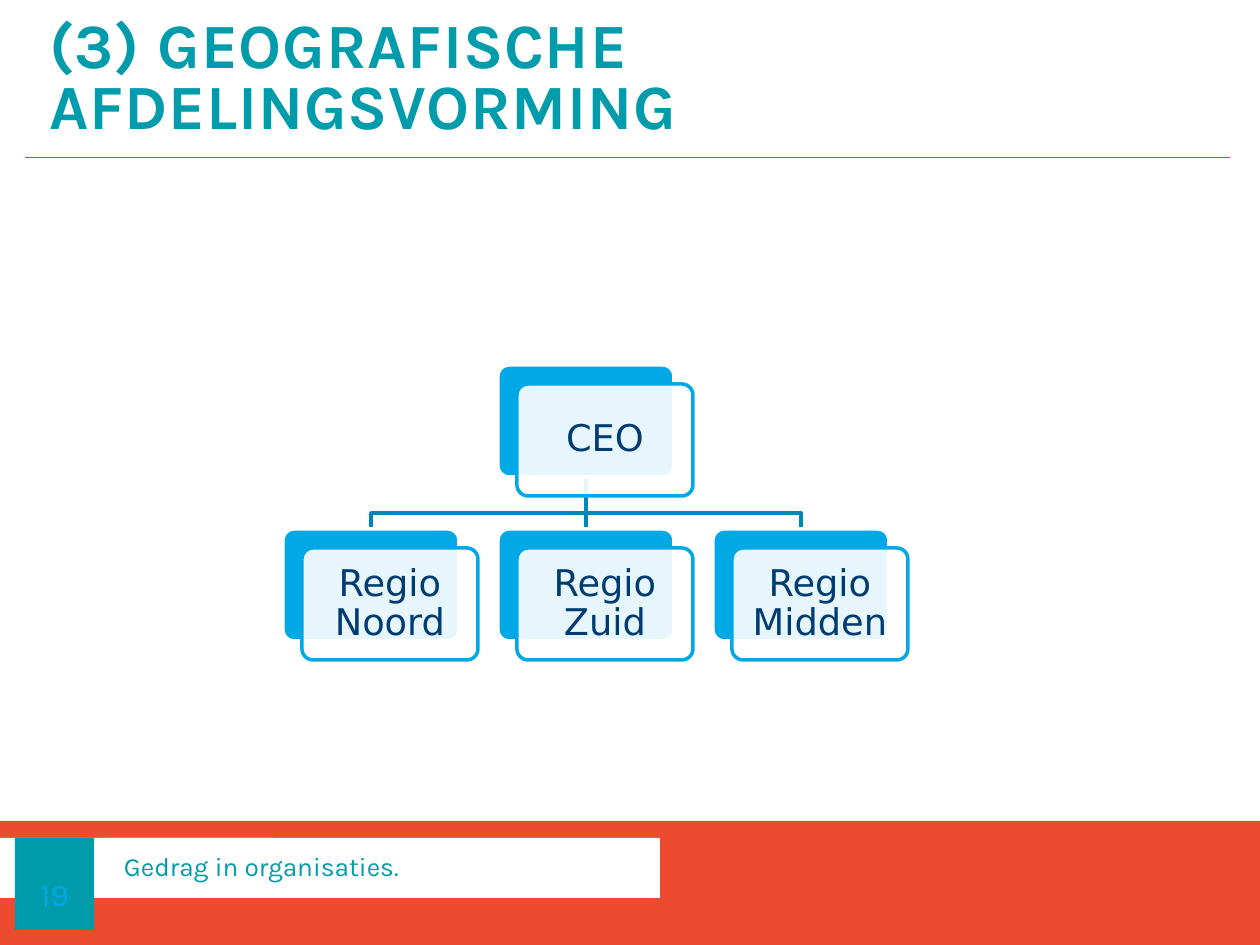
from pptx import Presentation
from pptx.dml.color import RGBColor as Rgb
from pptx.enum.shapes import MSO_CONNECTOR as Link, MSO_SHAPE as Kind
from pptx.enum.text import MSO_ANCHOR as Anchor, PP_ALIGN as Align
from pptx.oxml.ns import qn
from pptx.util import Pt
from lxml.etree import SubElement as Sub

TITLE = "(3) GEOGRAFISCHE AFDELINGSVORMING"
FOOTER = "Gedrag in organisaties."
NUMBER = "19"
HEAD = "CEO"
REGIONS = ["Regio Noord", "Regio Zuid", "Regio Midden"]

THEME = {
    "white": "FFFFFF", "red": "EC4B2F", "teal": "009CAB",
    "sky": "00A9E5", "link": "0087B7", "navy": "003C72",
    "title": {"name": "Karla", "size": Pt(36), "bold": True},
    "foot": {"name": "Karla", "size": Pt(15), "bold": False},
    "num": {"name": "Karla", "size": Pt(18), "bold": False},
    "node": {"name": "DejaVu Sans", "size": Pt(21), "bold": False},
}
SCALE = 914400 / 126
BOX_W, BOX_H, STEP, SHIFT = 176, 112, 215, 19
MID_X, HEAD_Y, REGION_Y, BEND_Y = 498, 365, 529, 513


def px(n):
    return round(n * SCALE)


def color(key):
    return Rgb.from_string(THEME[key])


def stroke(shape, key, width):
    shape.line.color.rgb = color(key)
    shape.line.width = Pt(width)


def flat(line):
    Sub(line._element.spPr, qn("a:effectLst"))


def block(slide, area, fill, line=None, kind=Kind.RECTANGLE):
    shape = slide.shapes.add_shape(kind, *map(px, area))
    shape.shadow.inherit = False
    shape.fill.solid()
    shape.fill.fore_color.rgb = color(fill)
    if line:
        stroke(shape, line, 2)
    else:
        shape.line.fill.background()
    if kind == Kind.ROUNDED_RECTANGLE:
        shape.adjustments[0] = 0.1
    return shape


def write(shape, text, style, ink, pad, anchor=Anchor.MIDDLE,
          align=Align.LEFT, space=0.9):
    frame = shape.text_frame
    sides = ("margin_left", "margin_top", "margin_right", "margin_bottom")
    look = dict(zip(sides, map(px, pad)), word_wrap=True, vertical_anchor=anchor)
    for key, value in look.items():
        setattr(frame, key, value)
    para = frame.paragraphs[0]
    para.alignment, para.line_spacing = align, space
    run = para.add_run()
    run.text = text
    for key, value in THEME[style].items():
        setattr(run.font, key, value)
    run.font.color.rgb = color(ink)
    return run


def node(slide, text, left, top):
    back = block(slide, (left, top, BOX_W, BOX_H), "sky", "white",
                 Kind.ROUNDED_RECTANGLE)
    front = block(slide, (left + SHIFT, top + SHIFT, BOX_W, BOX_H), "white", "sky",
                  Kind.ROUNDED_RECTANGLE)
    tint = front.fill._xPr.find(qn("a:solidFill"))[0]
    Sub(tint, qn("a:alpha"), val="90000")
    write(front, text, "node", "navy", (15, 15, 15, 15), align=Align.CENTER)
    return back


def elbow(slide, start, end):
    pen = slide.shapes.build_freeform(px(start[0]), px(start[1]))
    bends = [(start[0], BEND_Y), (end[0], BEND_Y), end]
    pen.add_line_segments([(px(x), px(y)) for x, y in bends], close=False)
    shape = pen.convert_to_shape()
    shape.shadow.inherit = False
    shape.fill.background()
    stroke(shape, "link", 2)


def chart(slide):
    start = (MID_X + BOX_W // 2, HEAD_Y + BOX_H)
    for side in (1, -1):
        elbow(slide, start, (start[0] + side * STEP, REGION_Y))
    stem = slide.shapes.add_connector(
        Link.STRAIGHT, px(start[0]), px(start[1]), px(start[0]), px(REGION_Y))
    stroke(stem, "link", 2)
    flat(stem)
    head = node(slide, HEAD, MID_X, HEAD_Y)
    backs = [node(slide, text, MID_X + (i - 1) * STEP, REGION_Y)
             for i, text in enumerate(REGIONS)]
    stem.begin_connect(head, 2)
    stem.end_connect(backs[1], 0)


def main():
    deck = Presentation()
    deck.slide_width, deck.slide_height = px(1260), px(945)
    slide = deck.slides.add_slide(deck.slide_layouts[5])

    title = slide.shapes.title
    area = dict(left=0, top=0, width=px(1260), height=px(157))
    for key, value in area.items():
        setattr(title, key, value)
    run = write(title, TITLE, "title", "teal", (49, 25, 100, 20), space=0.8)
    run._r.get_or_add_rPr().set("spc", "50")

    block(slide, (0, 821, 1260, 124), "red")
    block(slide, (0, 838, 273, 60), "white")
    rule = slide.shapes.add_connector(
        Link.STRAIGHT, px(25), px(157), px(1230), px(157))
    stroke(rule, "teal", 0.5)
    flat(rule)

    badge = block(slide, (15, 838, 79, 92), "teal")
    write(badge, NUMBER, "num", "sky", (0, 0, 0, 17), Anchor.BOTTOM,
          Align.CENTER, 1.0)
    chart(slide)
    foot = block(slide, (104, 838, 556, 60), "white")
    write(foot, FOOTER, "foot", "teal", (20, 0, 20, 0))
    deck.save("out.pptx")


if __name__ == "__main__":
    main()
